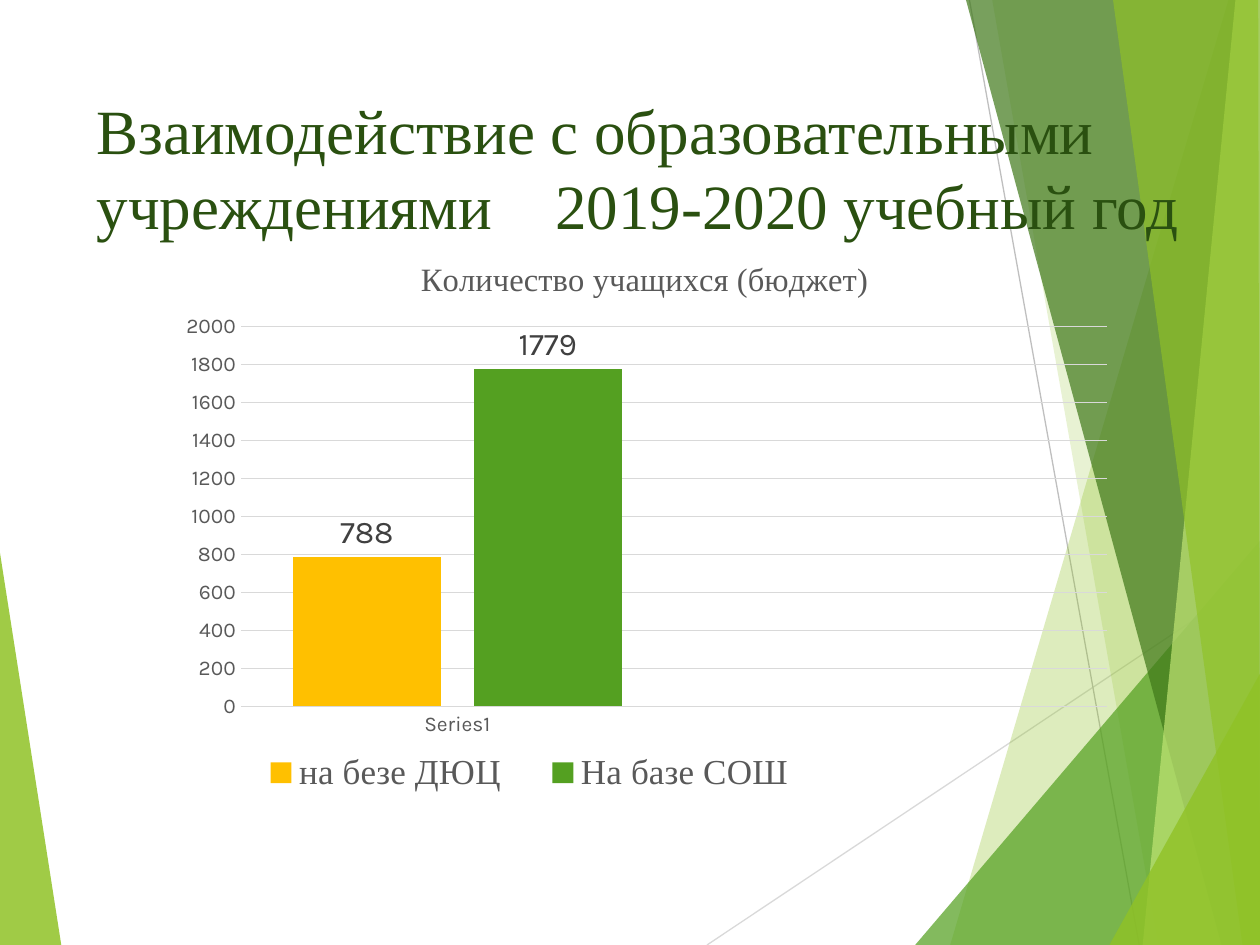
from dataclasses import dataclass
from lxml.etree import SubElement as Sub
from pptx import Presentation
from pptx.chart.data import CategoryChartData as Data
from pptx.dml.color import RGBColor as Color
from pptx.enum.chart import XL_CHART_TYPE as Kind, XL_LABEL_POSITION as Spot
from pptx.enum.chart import XL_LEGEND_POSITION as Side, XL_TICK_MARK as Tick
from pptx.enum.shapes import MSO_CONNECTOR as Link
from pptx.enum.text import MSO_ANCHOR as Anchor, MSO_AUTO_SIZE as Fit, PP_ALIGN as Align
from pptx.oxml.ns import qn
from pptx.util import Pt


@dataclass(frozen=True)
class Theme:
    serif: str = "Times New Roman"
    sans: str = "Karla"
    lime: str = "90C226"
    green: str = "54A021"
    moss: str = "3F7819"
    pale: str = "C0E474"
    gold: str = "FFC000"
    dark: str = "2A5010"
    text: str = "595959"
    label: str = "404040"
    rule: str = "D9D9D9"
    edge: str = "BFBFBF"
    head: float = 36
    title: float = 18.6
    key: float = 20
    value: float = 18
    axis: float = 12


class Deck:
    """Hold the theme and the slide, and draw each kind of element."""

    def __init__(self, theme):
        self.theme = theme
        self.show = Presentation()
        self.show.slide_width, self.show.slide_height = Pt(720), Pt(540)
        self.slide = self.show.slides.add_slide(self.show.slide_layouts[5])
        self.shapes = self.slide.shapes

    def style(self, font, name, size, color):
        font.name, font.size, font.bold = name, Pt(size), False
        font.color.rgb = Color.from_string(color)

    def stroke(self, line, color):
        line.color.rgb = Color.from_string(color)
        line.width = Pt(0.75)

    def facet(self, points, color, alpha):
        pen = self.shapes.build_freeform(*points[0], scale=float(Pt(1)))
        pen.add_line_segments(points[1:], close=True)
        shape = pen.convert_to_shape()
        shape.shadow.inherit = False
        shape.fill.solid()
        shape.fill.fore_color.rgb = Color.from_string(color)
        shape.line.fill.background()
        tint = shape.fill._xPr.find(qn("a:solidFill"))[0]
        Sub(tint, qn("a:alpha")).set("val", str(alpha * 1000))

    def line(self, start, end, color):
        ends = [Pt(n) for n in (*start, *end)]
        wire = self.shapes.add_connector(Link.STRAIGHT, *ends)
        self.stroke(wire.line, color)
        Sub(wire._element.spPr, qn("a:effectLst"))

    def title(self, text, box, tab):
        head = self.shapes.title
        self.shapes._spTree.append(head._element)
        head.left, head.top, head.width, head.height = map(Pt, box)
        frame = head.text_frame
        frame.text = text
        frame.word_wrap, frame.auto_size = True, Fit.NONE
        frame.vertical_anchor = Anchor.TOP
        para = frame.paragraphs[0]
        para.alignment, para.line_spacing = Align.LEFT, Pt(43)
        stops = Sub(para._p.get_or_add_pPr(), qn("a:tabLst"))
        stop = Sub(stops, qn("a:tab"))
        stop.set("pos", str(Pt(tab)))
        stop.set("algn", "l")
        for run in para.runs:
            self.style(run.font, self.theme.serif, self.theme.head, self.theme.dark)

    def place(self, node, box, inner=False):
        old = node.find(qn("c:layout"))
        if old is None:
            old = node.makeelement(qn("c:layout"))
            node.insert(0 if inner else 1, old)
        for child in list(old):
            old.remove(child)
        grid = Sub(old, qn("c:manualLayout"))
        pairs = [("xMode", "edge"), ("yMode", "edge"), *zip("xywh", box)]
        if inner:
            pairs.insert(0, ("layoutTarget", "inner"))
        for tag, val in pairs:
            Sub(grid, qn("c:" + tag)).set("val", str(val))

    def chart(self, title, cats, rows, box):
        look = self.theme
        data = Data()
        data.categories = cats
        for name, vals, _ in rows:
            data.add_series(name, vals)
        chart = self.shapes.add_chart(Kind.COLUMN_CLUSTERED, *map(Pt, box), data).chart
        self.style(chart.font, look.sans, look.axis, look.text)

        chart.has_title = True
        chart.chart_title.include_in_layout = False
        frame = chart.chart_title.text_frame
        frame.text = title
        self.style(frame.paragraphs[0].runs[0].font, look.serif, look.title, look.text)

        chart.has_legend = True
        chart.legend.position = Side.BOTTOM
        chart.legend.include_in_layout = False
        self.style(chart.legend.font, look.serif, look.key, look.text)

        for axis in (chart.category_axis, chart.value_axis):
            axis.major_tick_mark = axis.minor_tick_mark = Tick.NONE
            self.style(axis.tick_labels.font, look.sans, look.axis, look.text)
        self.stroke(chart.category_axis.format.line, look.rule)
        scale = chart.value_axis
        scale.minimum_scale, scale.maximum_scale, scale.major_unit = 0, 2000, 200
        scale.format.line.fill.background()
        self.stroke(scale.major_gridlines.format.line, look.rule)

        plot = chart.plots[0]
        plot.gap_width, plot.overlap, plot.vary_by_categories = 70, -22, False
        for bar, (_, _, color) in zip(plot.series, rows):
            bar.format.fill.solid()
            bar.format.fill.fore_color.rgb = Color.from_string(color)
            tags = bar.data_labels
            tags.show_value, tags.position = True, Spot.OUTSIDE_END
            self.style(tags.font, look.sans, look.value, look.label)

        area = chart._chartSpace.chart.plotArea
        self.place(area, (0.08, 0.16, 0.9, 0.66), inner=True)
        self.place(chart.legend._element, (0.07, 0.88, 0.62, 0.11))


def main():
    look = Theme()
    deck = Deck(look)
    deck.facet([(0, 316), (35, 540), (0, 540)], look.lime, 85)
    deck.line((404, 540), (720, 329), look.rule)
    deck.line((554, 0), (651, 540), look.edge)
    base, roof = (720, 540), (720, 0)
    facets = [
        ([(702, 0), (543, 540), base, roof], look.lime, 30),
        ([(567, 0), (662, 540), base, roof], look.lime, 20),
        ([(523, 540), (720, 309), base], look.green, 72),
        ([(552, 0), (698, 540), base, roof], look.moss, 70),
        ([(706, 0), (653, 540), base, roof], look.pale, 70),
        ([(636, 0), (710, 540), base, (718.6, 0)], look.lime, 65),
        ([(634, 540), (720, 385), base], look.lime, 80),
    ]
    for facet in facets:
        deck.facet(*facet)
    deck.title("Взаимодействие с образовательными учреждениями\t2019-2020 учебный год",
               (48, 49, 641, 104), 262)
    rows = [("на безе ДЮЦ", (788, None), look.gold),
            ("На базе СОШ", (1779, None), look.green)]
    deck.chart("Количество учащихся (бюджет)", ("Series1", ""), rows,
               (93.6, 134, 550, 329))
    deck.show.save("out.pptx")


if __name__ == "__main__":
    main()
